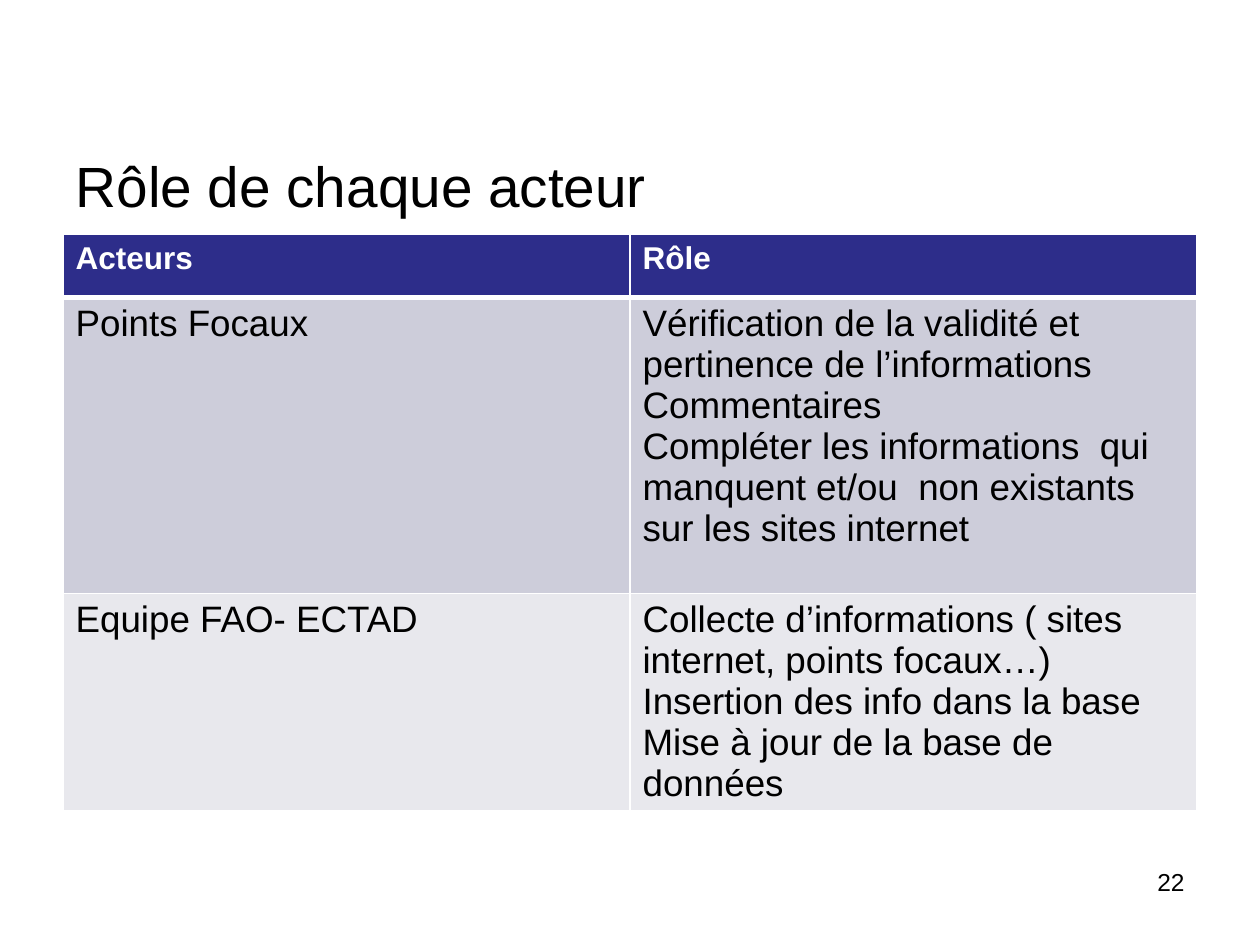
from lxml import etree
from pptx import Presentation
from pptx.dml.color import RGBColor
from pptx.enum.text import MSO_ANCHOR, MSO_AUTO_SIZE, PP_ALIGN
from pptx.oxml.ns import qn
from pptx.util import Pt

PX = 9144  # 100 px to the inch
LEFT, RIGHT = PP_ALIGN.LEFT, PP_ALIGN.RIGHT
TOP, MIDDLE = MSO_ANCHOR.TOP, MSO_ANCHOR.MIDDLE
NO_FIT = MSO_AUTO_SIZE.NONE
TITLE_ONLY = 5

COLORS = {
    "text": "000000",
    "white": "FFFFFF",
    "header": "2D2D8A",
    "band_dark": "CDCDDA",
    "band_light": "E8E8ED",
}

ROWS = [
    [["Acteurs"], ["Rôle"]],
    [
        ["Points Focaux"],
        [
            "Vérification de la validité et pertinence de l’informations",
            "Commentaires",
            "Compléter les informations  qui manquent et/ou  non existants sur les sites internet",
        ],
    ],
    [
        ["Equipe FAO- ECTAD"],
        [
            "Collecte d’informations ( sites internet, points focaux…)",
            "Insertion des info dans la base",
            "Mise à jour de la base de données",
        ],
    ],
]


class Deck:
    font = "Arial"

    def __init__(self, prs):
        self.prs = prs
        self.s = prs.slides.add_slide(prs.slide_layouts[TITLE_ONLY])

    def add_lines(self, tf, lines, size, color="text", bold=False, align=LEFT):
        tf.word_wrap = True
        for i, line in enumerate(lines):
            p = tf.add_paragraph() if i else tf.paragraphs[0]
            p.alignment = align
            r = p.add_run()
            r.text = line
            r.font.name, r.font.size, r.font.bold = self.font, Pt(size), bold
            r.font.color.rgb = RGBColor.from_string(COLORS[color])

    def title(self, text, x, y, w, h, size):
        sp = self.s.shapes.title
        sp.left, sp.top, sp.width, sp.height = (v * PX for v in (x, y, w, h))
        tf = sp.text_frame
        tf.auto_size, tf.vertical_anchor = NO_FIT, MIDDLE
        self.add_lines(tf, [text], size)

    def text(self, text, x, y, w, h, size, align):
        sp = self.s.shapes.add_textbox(x * PX, y * PX, w * PX, h * PX)
        self.add_lines(sp.text_frame, [text], size, align=align)

    def border(self, cell, top, bottom):
        tc_pr = cell._tc.get_or_add_tcPr()
        for side, width in (("L", 1), ("R", 1), ("T", top), ("B", bottom)):
            ln = etree.SubElement(tc_pr, qn("a:ln" + side), w=str(Pt(width)))
            fill = etree.SubElement(ln, qn("a:solidFill"))
            etree.SubElement(fill, qn("a:srgbClr"), val=COLORS["white"])

    def table(self, rows, x, y, col_w, row_heights):
        n = len(rows[0])
        frame = self.s.shapes.add_table(
            len(rows), n, x * PX, y * PX, n * col_w * PX, sum(row_heights) * PX)
        table = frame.table
        for col in table.columns:
            col.width = col_w * PX
        for i, (row, height) in enumerate(zip(rows, row_heights)):
            table.rows[i].height = height * PX
            head = i == 0
            band = "header" if head else "band_dark" if i % 2 else "band_light"
            for j, lines in enumerate(row):
                cell = table.cell(i, j)
                # The rule below the header is thicker
                self.border(cell, 3 if i == 1 else 1, 3 if head else 1)
                cell.fill.solid()
                cell.fill.fore_color.rgb = RGBColor.from_string(COLORS[band])
                cell.vertical_anchor = TOP
                self.add_lines(cell.text_frame, lines, 18 if head else 21,
                               "white" if head else "text", head)


def main():
    prs = Presentation()
    prs.slide_width, prs.slide_height = 1000 * PX, 750 * PX
    deck = Deck(prs)

    # Title
    deck.title("Rôle de chaque acteur", 50, 115, 900, 63, 32.4)

    # Actors and their roles
    deck.table(ROWS, 50, 186, 450, [50, 235, 161])

    # Page number
    deck.text("22", 717, 683, 233, 52, 14, RIGHT)

    prs.save("out.pptx")


if __name__ == "__main__":
    main()
